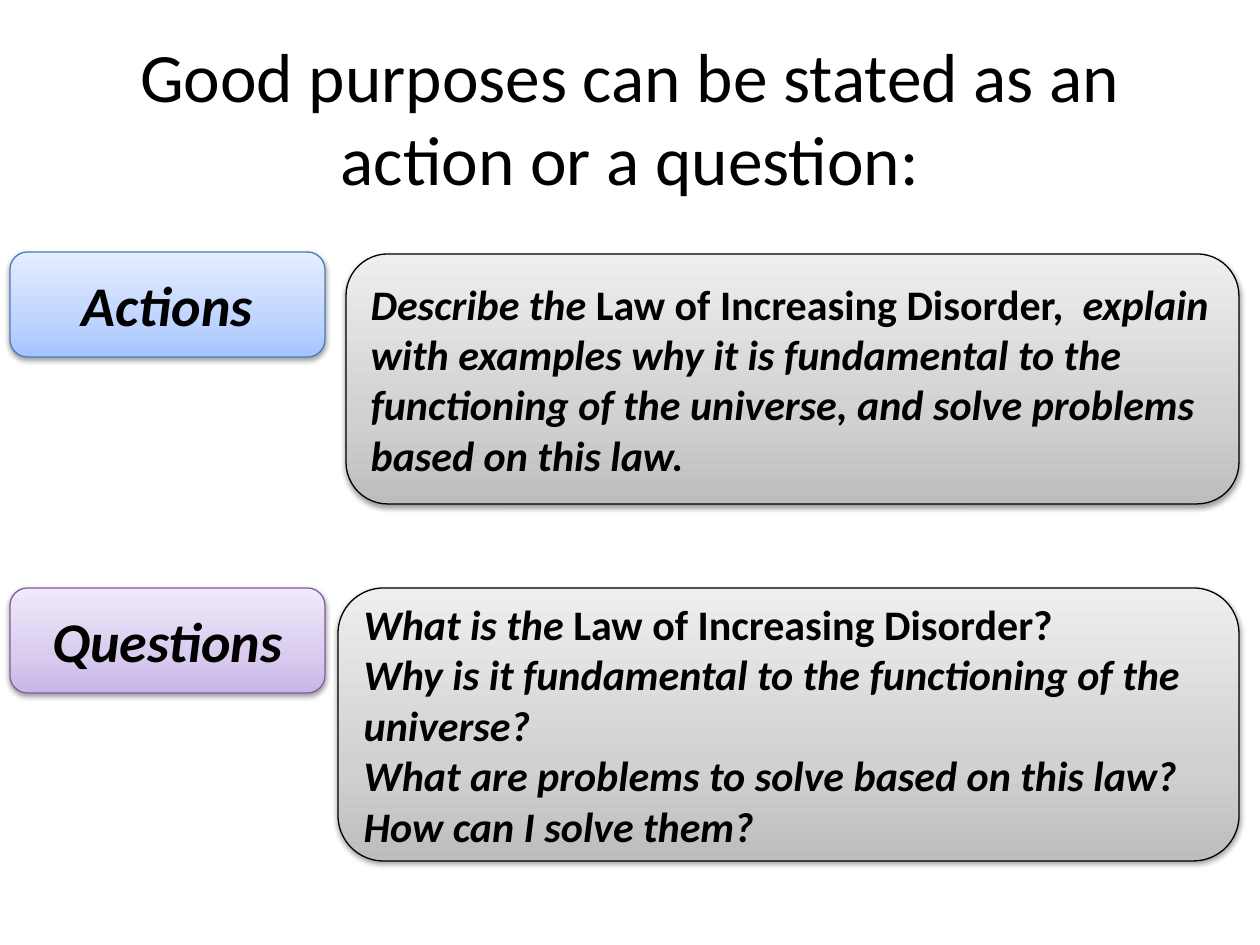
from copy import deepcopy

from lxml import etree
from pptx import Presentation
from pptx.dml.color import RGBColor
from pptx.enum.shapes import MSO_SHAPE
from pptx.enum.text import MSO_ANCHOR, PP_ALIGN
from pptx.oxml import parse_xml
from pptx.util import Pt

PX = 914400 // 126
FONT = "Calibri"
BLACK = RGBColor(0, 0, 0)
BLUE_LINE = RGBColor(0x4B, 0x7E, 0xBC)
PURPLE_LINE = RGBColor(0x7D, 0x60, 0xA0)
# Gradient colours, from the bottom of a box to its top
BLUES = RGBColor(0xA4, 0xC4, 0xFF), RGBColor(0xBF, 0xD4, 0xFF), RGBColor(0xE6, 0xEE, 0xFF)
PURPLES = RGBColor(0xC9, 0xB5, 0xE8), RGBColor(0xD8, 0xCB, 0xEE), RGBColor(0xF0, 0xEA, 0xF9)
GRAYS = RGBColor(0xBD, 0xBD, 0xBD), RGBColor(0xD1, 0xD1, 0xD1), RGBColor(0xEE, 0xEE, 0xEE)
STOPS = 0, 0.35, 1

SHADOW = (
    '<a:effectLst xmlns:a="http://schemas.openxmlformats.org/drawingml/2006/main">'
    '<a:outerShdw blurRad="40000" dist="20000" dir="5400000" rotWithShape="0">'
    '<a:srgbClr val="000000"><a:alpha val="38000"/></a:srgbClr>'
    "</a:outerShdw></a:effectLst>"
)


def add_box(slide, bounds, colors, line_color, paragraphs, size, align):
    """Add a shaded rounded box; each paragraph is a list of (text, italic) runs."""
    box = slide.shapes.add_shape(
        MSO_SHAPE.ROUNDED_RECTANGLE, *(length * PX for length in bounds))
    box.fill.gradient()
    box.fill.gradient_angle = 90
    first_stop = box.fill._fill._gradFill.gsLst[0]
    first_stop.addnext(deepcopy(first_stop))
    for stop, position, color in zip(box.fill.gradient_stops, STOPS, colors):
        stop.color.rgb = color
        stop.position = position
    box.line.color.rgb = line_color
    box.line.width = Pt(0.75)
    box._element.spPr.append(parse_xml(SHADOW))

    frame = box.text_frame
    frame.word_wrap = True
    frame.vertical_anchor = MSO_ANCHOR.MIDDLE
    for index, runs in enumerate(paragraphs):
        paragraph = frame.add_paragraph() if index else frame.paragraphs[0]
        paragraph.alignment = align
        font = paragraph.font
        font.name, font.size, font.bold = FONT, Pt(size), True
        font.color.rgb = BLACK
        for text, italic in runs:
            run = paragraph.add_run()
            run.text = text
            run.font.italic = italic


prs = Presentation()
prs.slide_width, prs.slide_height = 1260 * PX, 945 * PX
slide = prs.slides.add_slide(prs.slide_layouts[5])

title = slide.shapes.title
title.left, title.top, title.width, title.height = 63 * PX, 38 * PX, 1134 * PX, 157 * PX
title.text_frame.text = "Good purposes can be stated as an action or a question:"
title.text_frame.vertical_anchor = MSO_ANCHOR.MIDDLE
heading = title.text_frame.paragraphs[0]
heading.alignment = PP_ALIGN.CENTER
heading.font.name, heading.font.size = FONT, Pt(39.6)
heading.font.color.rgb = BLACK

action_text = [
    [("Describe the ", True), ("Law of Increasing Disorder, ", False),
     (" explain with examples why it is fundamental to the functioning of the "
      "universe, and solve problems based on this law.", True)],
]
question_text = [
    [("What is the ", True), ("Law of Increasing Disorder?", False)],
    [("Why is it fundamental to the functioning of the universe?", True)],
    [("What are problems to solve based on this law?", True)],
    [("How can I solve them?", True)],
]

rows = [
    ("Actions", 252, BLUES, BLUE_LINE, (346, 254, 893, 250), action_text),
    ("Questions", 588, PURPLES, PURPLE_LINE, (338, 588, 901, 273), question_text),
]
for label, top, colors, line_color, example_bounds, example_text in rows:
    add_box(slide, (10, top, 315, 105), colors, line_color,
            [[(label, True)]], 32, PP_ALIGN.CENTER)
    add_box(slide, example_bounds, GRAYS, BLACK, example_text, 24, PP_ALIGN.LEFT)

prs.save("out.pptx")
